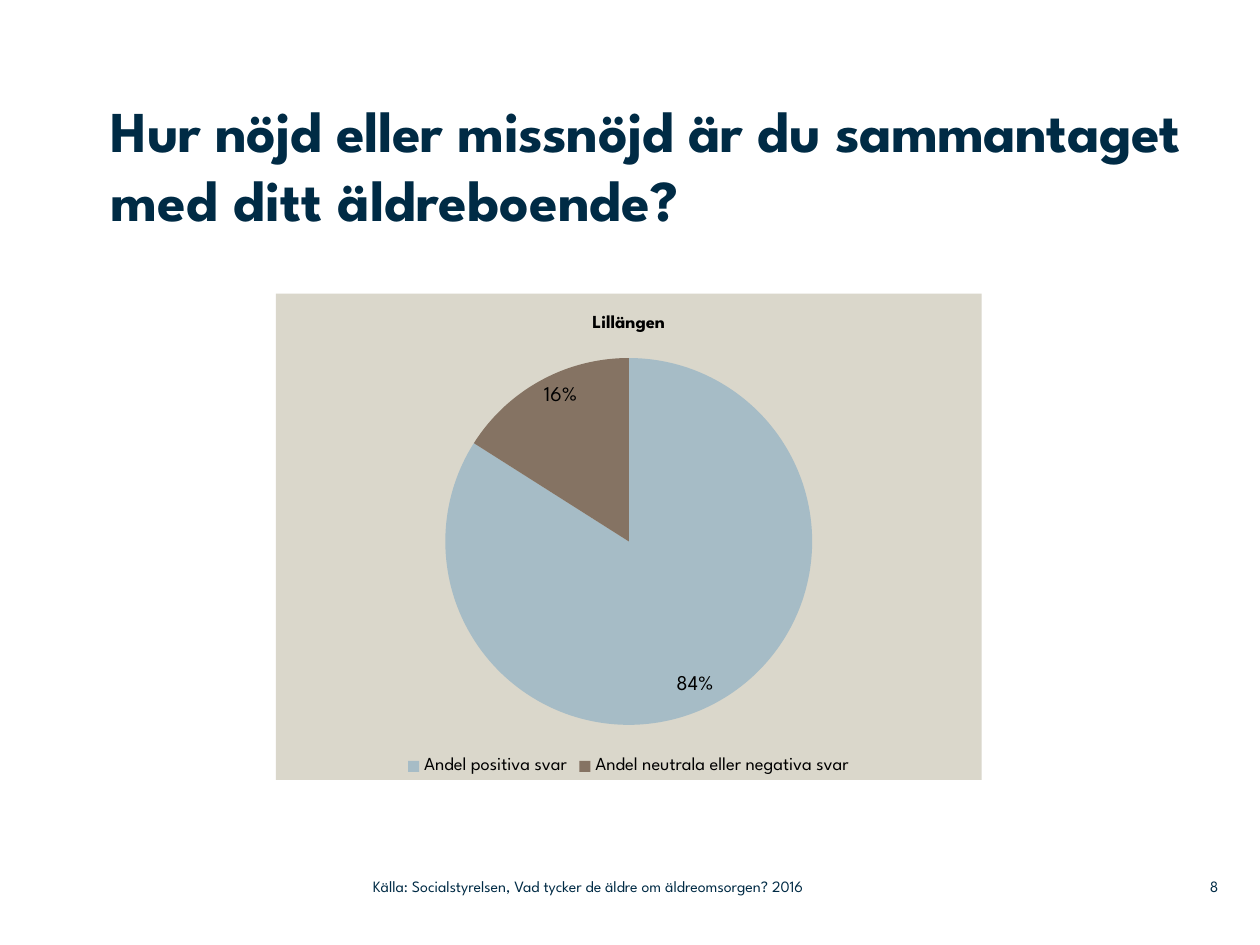
from lxml import etree
from pptx import Presentation
from pptx.chart.data import CategoryChartData
from pptx.dml.color import RGBColor
from pptx.enum.chart import XL_CHART_TYPE, XL_LABEL_POSITION, XL_LEGEND_POSITION
from pptx.enum.text import MSO_ANCHOR, PP_ALIGN
from pptx.oxml import parse_xml
from pptx.oxml.ns import nsdecls, qn
from pptx.util import Inches, Pt

PIE = XL_CHART_TYPE.PIE
INSIDE_END = XL_LABEL_POSITION.INSIDE_END
LEGEND_BOTTOM = XL_LEGEND_POSITION.BOTTOM
TOP, MIDDLE = MSO_ANCHOR.TOP, MSO_ANCHOR.MIDDLE
LEFT, RIGHT = PP_ALIGN.LEFT, PP_ALIGN.RIGHT

FONT = "League Spartan"
NAVY, BLACK, SAND = "002B45", "000000", "DAD7CB"
ANSWERS = [
    ("Andel positiva svar", 84, "A6BCC6"),
    ("Andel neutrala eller negativa svar", 16, "857363"),
]


def rgb(value):
    return RGBColor.from_string(value)


def style_font(font, size, color, bold=False):
    font.name = FONT
    font.size = Pt(size)
    font.bold = bold
    font.color.rgb = rgb(color)


def add_text(slide, box, runs, size, bold=False, anchor=MIDDLE, align=LEFT):
    """Add a one-paragraph text box; runs holds (text, letter spacing in points)."""
    tf = slide.shapes.add_textbox(*map(Inches, box)).text_frame
    tf.word_wrap = True
    tf.vertical_anchor = anchor
    tf.margin_left = tf.margin_right = tf.margin_top = tf.margin_bottom = 0
    p = tf.paragraphs[0]
    p.alignment = align
    for text, spacing in runs:
        r = p.add_run()
        r.text = text
        style_font(r.font, size, NAVY, bold)
        if spacing:
            r.font._element.set("spc", str(round(spacing * 100)))


def fill_chart_area(chart, color):
    sp_pr = parse_xml(
        f'<c:spPr {nsdecls("c", "a")}><a:solidFill><a:srgbClr val="{color}"/>'
        "</a:solidFill><a:ln><a:noFill/></a:ln></c:spPr>")
    chart._chartSpace.find(qn("c:chart")).addnext(sp_pr)


def place_plot(chart, x, y, w, h):
    """Place the inner plot area, in fractions of the chart."""
    plot_area = chart._chartSpace.find(".//" + qn("c:plotArea"))
    for old in plot_area.findall(qn("c:layout")):
        plot_area.remove(old)
    layout = etree.Element(qn("c:layout"))
    manual = etree.SubElement(layout, qn("c:manualLayout"))
    settings = [("layoutTarget", "inner"), ("xMode", "edge"), ("yMode", "edge"),
                ("x", x), ("y", y), ("w", w), ("h", h)]
    for tag, value in settings:
        etree.SubElement(manual, qn(f"c:{tag}")).set("val", str(value))
    plot_area.insert(0, layout)


def add_pie(slide, box, title, answers):
    data = CategoryChartData()
    data.categories = [name for name, _, _ in answers]
    data.add_series("Series 1", [value for _, value, _ in answers])
    chart = slide.shapes.add_chart(PIE, *map(Inches, box), data).chart
    style_font(chart.font, 18, BLACK)
    fill_chart_area(chart, SAND)
    place_plot(chart, 0.24, 0.13, 0.52, 0.76)

    # Title and legend
    chart.has_title = True
    r = chart.chart_title.text_frame.paragraphs[0].add_run()
    r.text = title
    style_font(r.font, 10.5, BLACK, bold=True)
    chart.chart_title.include_in_layout = False
    chart.has_legend = True
    chart.legend.position = LEGEND_BOTTOM
    chart.legend.include_in_layout = False
    style_font(chart.legend.font, 10.5, BLACK)

    # Slices and percentages
    plot = chart.plots[0]
    plot.vary_by_categories = True
    series = plot.series[0]
    for i, (_, _, color) in enumerate(answers):
        fill = series.points[i].format.fill
        fill.solid()
        fill.fore_color.rgb = rgb(color)
    labels = series.data_labels
    labels.show_percentage = True
    labels.show_value = False
    labels.number_format = "0%"
    labels.number_format_is_linked = False
    labels.position = INSIDE_END
    style_font(labels.font, 12, BLACK)


def main():
    prs = Presentation()
    prs.slide_width, prs.slide_height = Inches(10), Inches(7.5)
    slide = prs.slides.add_slide(prs.slide_layouts[6])

    # Heading
    add_text(slide, (0.88, 0.75, 8.83, 1.42),
             [("Hur nöjd eller missnöjd är du sammantaget ", -0.3),
              ("med ditt äldreboende?", 0)],
             33, bold=True, anchor=TOP)

    # Survey result
    add_pie(slide, (2.19, 2.33, 5.6, 3.86), "Lillängen", ANSWERS)

    # Source and page number
    add_text(slide, (2.96, 6.89, 4.43, 0.29),
             [("Källa: Socialstyrelsen, Vad tycker de äldre om äldreomsorgen? 2016", 0)], 9)
    add_text(slide, (9.2, 6.89, 0.47, 0.29), [("8", 0)], 9, align=RIGHT)

    prs.save("out.pptx")


if __name__ == "__main__":
    main()
